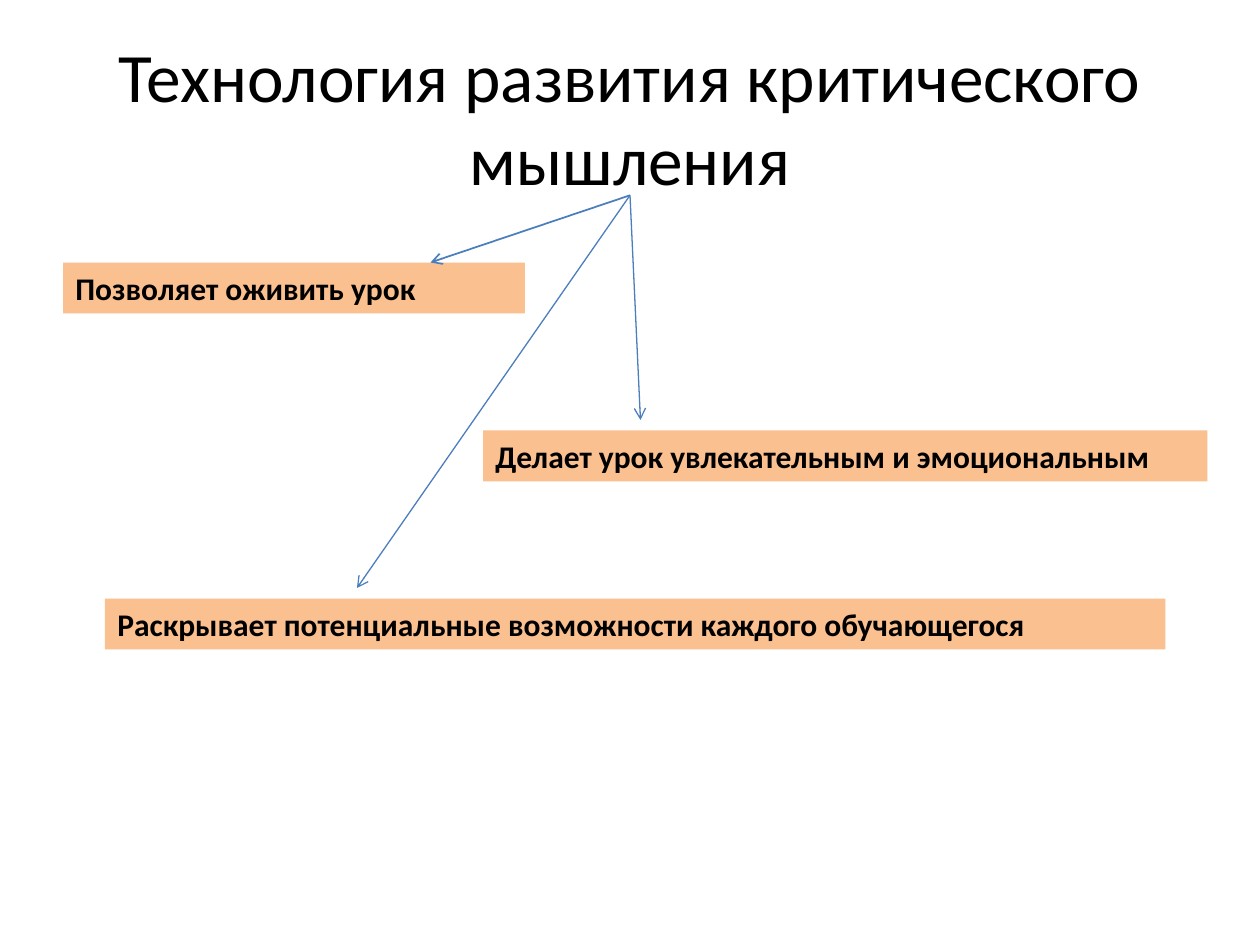
from pptx import Presentation
from pptx.dml.color import RGBColor
from pptx.enum.shapes import MSO_CONNECTOR, MSO_SHAPE
from pptx.enum.text import MSO_ANCHOR, PP_ALIGN
from pptx.oxml.ns import qn
from pptx.util import Pt
from lxml.etree import SubElement

BLACK = RGBColor(0, 0, 0)
PEACH = RGBColor(0xFA, 0xC0, 0x90)
BLUE = RGBColor(0x4B, 0x7E, 0xBC)

TITLE = (36, 21.6, 648, 90)
HUB = (360, 111.6)
BAR = 29.1  # height of each label

# text, left, top, width
LABELS = [
    ("Позволяет оживить урок", 36, 150, 264),
    ("Делает урок увлекательным и эмоциональным", 276, 246, 414),
    ("Раскрывает потенциальные возможности каждого обучающегося", 60, 342, 606),
]
# tip x, tip y, line width
ARROWS = [(366, 240, 0.75), (204, 336, 0.75), (246, 150, 1)]


def write(frame, text, size, align, bold=False):
    frame.word_wrap = True
    frame.vertical_anchor = MSO_ANCHOR.MIDDLE
    para = frame.paragraphs[0]
    para.alignment = align
    run = para.add_run()
    run.text = text
    font = run.font
    font.name, font.size, font.bold = "Calibri", Pt(size), bold
    font.color.rgb = BLACK


def add_title(slide, box, text):
    title = slide.shapes.title
    title.left, title.top, title.width, title.height = map(Pt, box)
    write(title.text_frame, text, 39.6, PP_ALIGN.CENTER)


def add_label(slide, box, text):
    bar = slide.shapes.add_shape(MSO_SHAPE.RECTANGLE, *map(Pt, box))
    bar.shadow.inherit = False
    bar.fill.solid()
    bar.fill.fore_color.rgb = PEACH
    bar.line.fill.background()
    write(bar.text_frame, text, 18, PP_ALIGN.LEFT, bold=True)


def add_arrow(slide, start, tip, width):
    arrow = slide.shapes.add_connector(
        MSO_CONNECTOR.STRAIGHT, *map(Pt, start + tip))
    arrow.line.color.rgb = BLUE
    arrow.line.width = Pt(width)
    SubElement(arrow.line._get_or_add_ln(), qn("a:tailEnd"), type="arrow")
    SubElement(arrow._element.spPr, qn("a:effectLst"))


def main():
    deck = Presentation()
    deck.slide_width, deck.slide_height = Pt(720), Pt(540)
    slide = deck.slides.add_slide(deck.slide_layouts[5])
    add_title(slide, TITLE, "Технология развития критического мышления")
    for text, left, top, width in LABELS:
        add_label(slide, (left, top, width, BAR), text)
    for x, y, width in ARROWS:
        add_arrow(slide, HUB, (x, y), width)
    deck.save("out.pptx")


if __name__ == "__main__":
    main()
